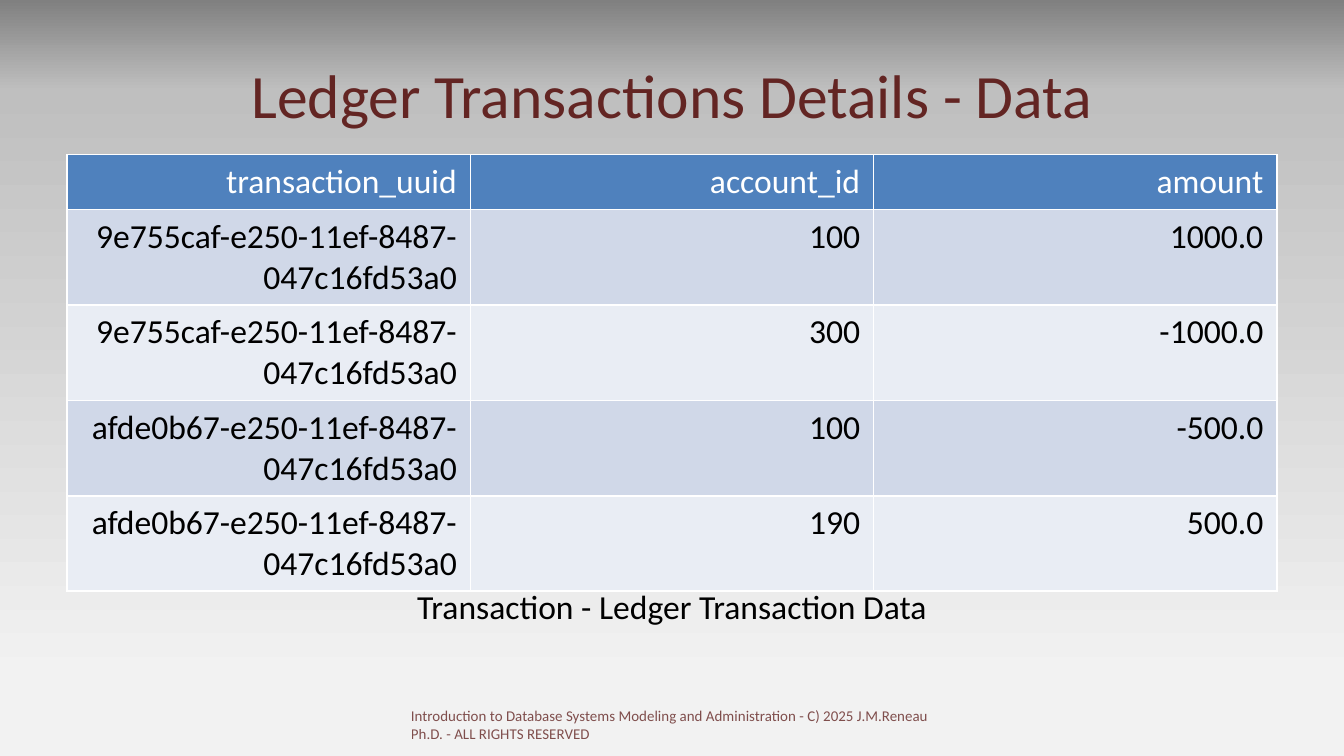
from lxml import etree
from pptx import Presentation
from pptx.dml.color import RGBColor as RGB
from pptx.enum.text import MSO_ANCHOR as Anchor, PP_ALIGN as Align
from pptx.oxml import parse_xml
from pptx.oxml.ns import nsdecls, qn
from pptx.util import Inches, Pt

FONT = "Calibri"
WIDTH = 10
COLORS = {
    "title": "632523", "text": "000000", "white": "FFFFFF",
    "head": "4F81BD", "odd": "D0D8E8", "even": "E9EDF4",
}
BACK = [(0, "808080"), (12, "BFBFBF"), (90, "F2F2F2")]
HEAD = ["transaction_uuid", "account_id", "amount"]
FIRST = "9e755caf-e250-11ef-8487-047c16fd53a0"
SECOND = "afde0b67-e250-11ef-8487-047c16fd53a0"
ROWS = [
    [FIRST, "100", "1000.0"],
    [FIRST, "300", "-1000.0"],
    [SECOND, "100", "-500.0"],
    [SECOND, "190", "500.0"],
]


def paint(slide):
    """Fill the background with a vertical gradient."""
    fill = slide.background.fill
    fill.gradient()
    fill.gradient_angle = 270
    stops = slide.background._cSld.find(".//" + qn("a:gsLst"))
    for stop in list(stops):
        stops.remove(stop)
    for pos, color in BACK:
        stops.append(parse_xml(
            f'<a:gs {nsdecls("a")} pos="{pos * 1000}">'
            f'<a:srgbClr val="{color}"/></a:gs>'))


def write(frame, text, size, color, align):
    para = frame.paragraphs[0]
    para.alignment = align
    run = para.add_run()
    run.text = text
    run.font.name = FONT
    run.font.size = Pt(size)
    run.font.color.rgb = RGB.from_string(COLORS[color])
    return run


def add_text(slide, box, text, size, color, align=Align.CENTER,
             anchor=Anchor.TOP):
    frame = slide.shapes.add_textbox(*map(Inches, box)).text_frame
    frame.word_wrap = True
    frame.vertical_anchor = anchor
    return write(frame, text, size, color, align)


def fade(run, percent):
    """Set the opacity of the run's colour."""
    color = run._r.find(".//" + qn("a:srgbClr"))
    etree.SubElement(color, qn("a:alpha"), val=str(percent * 1000))


def edge(cell):
    """Draw thin white borders on all four sides."""
    props = cell._tc.get_or_add_tcPr()
    for i, side in enumerate("LRTB"):
        props.insert(i, parse_xml(
            f'<a:ln{side} {nsdecls("a")} w="{Pt(1)}"><a:solidFill>'
            f'<a:srgbClr val="{COLORS["white"]}"/></a:solidFill></a:ln{side}>'))


def add_ledger(slide, box):
    data = [HEAD] + ROWS
    table = slide.shapes.add_table(
        len(data), len(HEAD), *map(Inches, box)).table
    head = 0.41
    body = (box[3] - head) / len(ROWS)
    for i, values in enumerate(data):
        table.rows[i].height = Inches(body if i else head)
        if i == 0:
            back, color = "head", "white"
        else:
            back, color = "odd" if i % 2 else "even", "text"
        for j, value in enumerate(values):
            cell = table.cell(i, j)
            cell.fill.solid()
            cell.fill.fore_color.rgb = RGB.from_string(COLORS[back])
            edge(cell)
            write(cell.text_frame, value, 18, color, Align.RIGHT)


def main():
    deck = Presentation()
    deck.slide_width = Inches(WIDTH)
    deck.slide_height = Inches(WIDTH * 9 / 16)
    slide = deck.slides.add_slide(deck.slide_layouts[6])
    paint(slide)
    add_text(slide, (0.5, 0.23, 9, 0.94), "Ledger Transactions Details - Data",
             33, "title", anchor=Anchor.MIDDLE)
    add_ledger(slide, (0.5, 1.15, 9, 3.25))
    add_text(slide, (0.5, 4.31, 9, 0.56),
             "Transaction - Ledger Transaction Data", 18, "text")
    foot = add_text(
        slide, (2.96, 5.21, 4.06, 0.3),
        "Introduction to Database Systems Modeling and Administration"
        " - C) 2025 J.M.Reneau Ph.D. - ALL RIGHTS RESERVED",
        8, "title", Align.LEFT)
    fade(foot, 80)
    deck.save("out.pptx")


if __name__ == "__main__":
    main()
